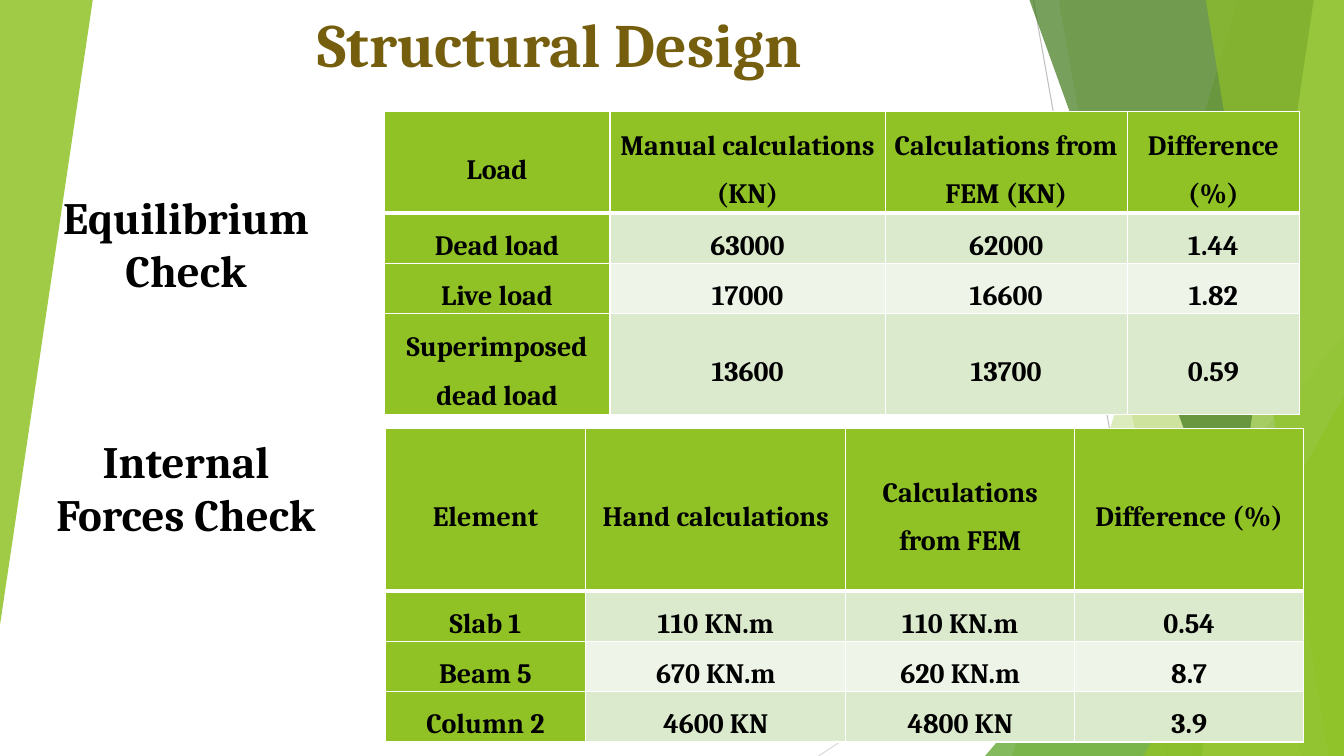
"""Build the structural design slide with its two check tables."""
from lxml import etree
from pptx import Presentation, util as u
from pptx.dml.color import RGBColor
from pptx.enum import shapes as es, text as et
from pptx.oxml.ns import qn

HUE = {"lime": "90C226", "leaf": "54A021", "dark": "3F7819", "pale": "C0E474",
       "odd": "DBE9CD", "even": "EEF4E8", "title": "755E0D", "ink": "000000",
       "white": "FFFFFF", "grey": "BFBFBF", "mist": "D9D9D9"}
FONT = "Cambria"
WIDE, HIGH = 13.33, 7.5

LINES = [((10.25, 0), (11.58, HIGH), "grey"), ((WIDE, 4.03), (8.12, HIGH), "mist")]
DECOR = [("band", (12.28, 10.04), "lime", 30),
         ("band", (10.5, 11.83), "lime", 20),
         ("tri", (9.77, 3.33, 3.56, 4.17, 0), "leaf", 72),
         ("band", (10.21, 12.91), "dark", 70),
         ("band", (13.03, 11.92), "pale", 70),
         ("band", (11.96, 13.18), "lime", 65),
         ("tri", (11.34, 3.93, 1.99, 3.57, 0), "lime", 80),
         ("tri", (0, 0, 0.92, 6.2, 180), "lime", 85)]
LABELS = [("Equilibrium Check", (0.44, 1.83, 2.81, 1.18)),
          ("Internal Forces Check", (0.44, 4.25, 2.81, 1.72))]
TABLES = [
    ((3.81, 1.11), (2.24, 2.73, 2.4, 1.71), (0.94, 0.46, 0.46, 0.94), [
        ("Load", "Manual calculations (KN)", "Calculations from FEM (KN)", "Difference (%)"),
        ("Dead load", "63000", "62000", "1.44"),
        ("Live load", "17000", "16600", "1.82"),
        ("Superimposed dead load", "13600", "13700", "0.59")]),
    ((3.82, 4.25), (1.99, 2.58, 2.27, 2.27), (1.61, 0.5, 0.5, 0.5), [
        ("Element", "Hand calculations", "Calculations from FEM", "Difference (%)"),
        ("Slab 1", "110 KN.m", "110 KN.m", "0.54"),
        ("Beam 5", "670 KN.m", "620 KN.m", "8.7"),
        ("Column 2", "4600 KN", "4800 KN", "3.9")])]


def inch(vals):
    return [u.Inches(v) for v in vals]


def rgb(name):
    return RGBColor.from_string(HUE[name])


def write(frame, words, size, color="ink"):
    frame.word_wrap = True
    frame.text = words
    para = frame.paragraphs[0]
    para.alignment = et.PP_ALIGN.CENTER
    font = para.font
    font.name, font.size, font.bold = FONT, u.Pt(size), True
    font.color.rgb = rgb(color)
    return para


def tint(shape, color, alpha):
    shape.shadow.inherit = False
    shape.line.fill.background()
    shape.fill.solid()
    shape.fill.fore_color.rgb = rgb(color)
    node = shape.fill._xPr.find(qn("a:solidFill"))[0]
    etree.SubElement(node, qn("a:alpha"), val=str(alpha * 1000))


def band(slide, top, base):
    pen = slide.shapes.build_freeform(*inch((top, 0)))
    pen.add_line_segments([inch(p) for p in ((WIDE, 0), (WIDE, HIGH), (base, HIGH))])
    return pen.convert_to_shape()


def tri(slide, left, top, wide, high, turn):
    kind = es.MSO_SHAPE.ISOSCELES_TRIANGLE
    shape = slide.shapes.add_shape(kind, *inch((left, top, wide, high)))
    shape.adjustments[0] = 1
    shape.rotation = turn
    return shape


def edge(cell, row):
    props = cell._tc.get_or_add_tcPr()
    for side in "LRTB":
        thick = (row, side) in ((0, "B"), (1, "T"))
        line = etree.SubElement(props, qn("a:ln" + side), w=str(u.Pt(3 if thick else 1)))
        fill = etree.SubElement(line, qn("a:solidFill"))
        etree.SubElement(fill, qn("a:srgbClr"), val=HUE["white"])


def grid(slide, spot, cols, rows, data):
    size = inch((*spot, sum(cols), sum(rows)))
    table = slide.shapes.add_table(len(rows), len(cols), *size).table
    for col, wide in zip(table.columns, cols):
        col.width = u.Inches(wide)
    for r, (line, high) in enumerate(zip(data, rows)):
        table.rows[r].height = u.Inches(high)
        for c, words in enumerate(line):
            cell = table.cell(r, c)
            edge(cell, r)
            cell.fill.solid()
            cell.fill.fore_color.rgb = rgb("lime" if r * c == 0 else "odd" if r % 2 else "even")
            cell.vertical_anchor = et.MSO_ANCHOR.MIDDLE
            cell.margin_left = cell.margin_right = u.Inches(0.07)
            cell.margin_top = cell.margin_bottom = 0
            write(cell.text_frame, words, 20).line_spacing = 1.5


def main():
    deck = Presentation()
    deck.slide_width, deck.slide_height = inch((WIDE, HIGH))
    slide = deck.slides.add_slide(deck.slide_layouts[5])

    for start, end, color in LINES:
        line = slide.shapes.add_connector(es.MSO_CONNECTOR.STRAIGHT, *inch(start + end))
        line.line.color.rgb = rgb(color)
        line.line.width = u.Pt(0.75)
        etree.SubElement(line._element.spPr, qn("a:effectLst"))
    for kind, args, color, alpha in DECOR:
        make = band if kind == "band" else tri
        tint(make(slide, *args), color, alpha)

    title = slide.shapes.title
    title.left, title.top, title.width, title.height = inch((1.28, 0.01, 8.55, 0.84))
    write(title.text_frame, "Structural Design", 44, "title")
    for words, box in LABELS:
        write(slide.shapes.add_textbox(*inch(box)).text_frame, words, 32)
    for item in TABLES:
        grid(slide, *item)
    deck.save("out.pptx")


if __name__ == "__main__":
    main()
